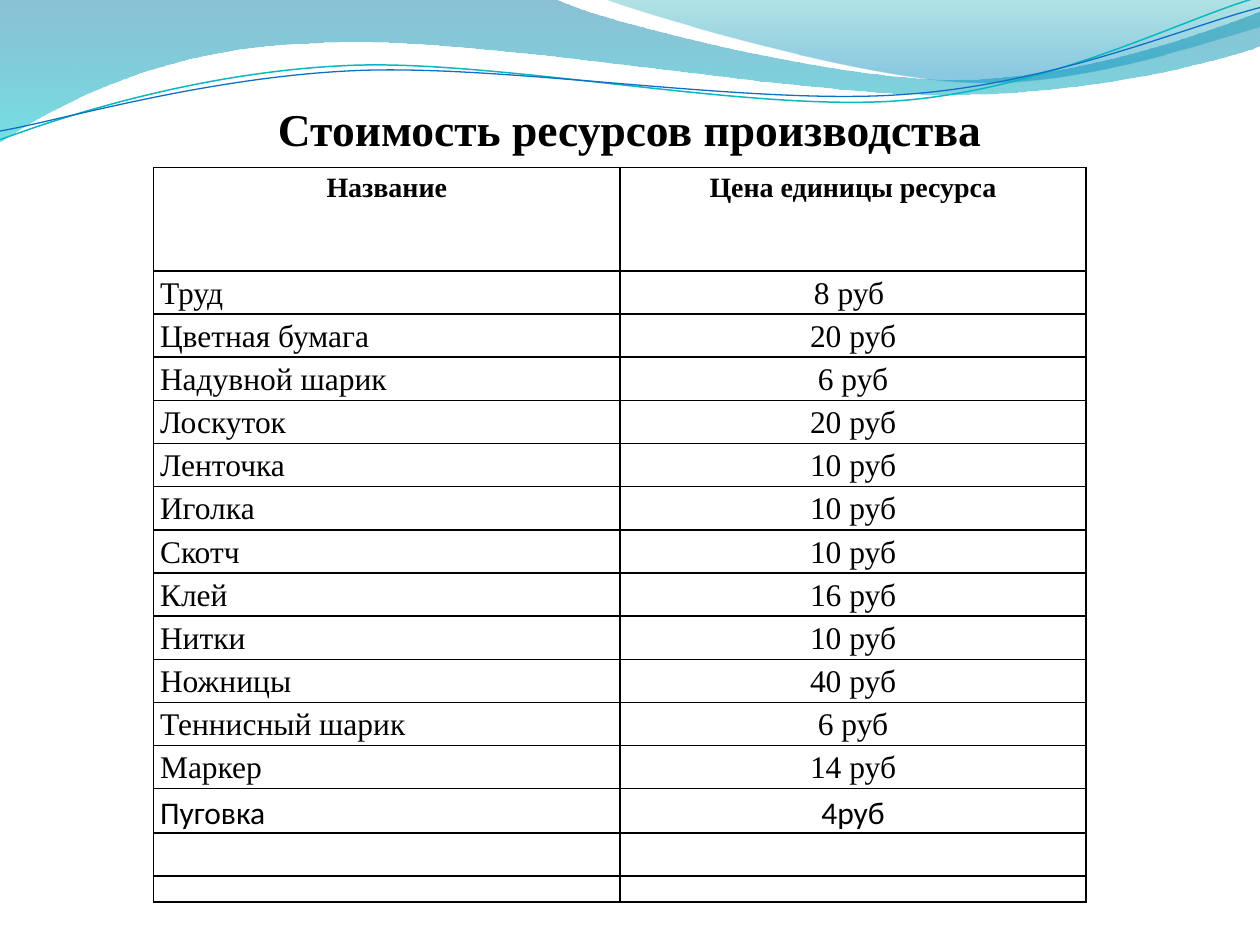
from dataclasses import dataclass
from math import cos, radians, sin

from lxml.etree import SubElement
from pptx import Presentation
from pptx.dml.color import RGBColor
from pptx.enum.text import MSO_ANCHOR as Anchor, PP_ALIGN as Align
from pptx.oxml.ns import qn
from pptx.util import Inches, Pt

COLORS = {
    "text": "000000",
    "border": "000000",
    "deep blue": "0074A1",
    "aqua": "00C6CF",
    "teal": "00A1A9",
    "sky": "008BBF",
    "teal line": "0AB8BF",
    "blue line": "0F6FC6",
}
SERIF = "Times New Roman"


@dataclass
class Stop:
    position: float
    color: str
    opacity: int


@dataclass
class Wave:
    bounds: tuple
    start: tuple
    segments: list
    stops: tuple = ()
    line: str = ""
    width: float = 0
    rotation: float = 0


@dataclass
class Resource:
    name: str
    price: str
    font: str = SERIF


WAVES = [
    Wave(
        (-0.01, -0.01, 10.02, 1.14), (0, 0),
        [(4.4, -0.01), (4.76, 0.17, 6.64, 0.63, 7.58, 0.63),
         (8.53, 0.63, 9.58, 0.26, 10, 0.09), (10.01, 0.36),
         (9.83, 0.44, 8.7, 0.76, 7.46, 0.75), (6.22, 0.75, 3.82, 0.28, 2.57, 0.34),
         (1.29, 0.36, 0.46, 0.83, -0.01, 1.13), (0, 0)],
        stops=(Stop(0, "deep blue", 45), Stop(1, "aqua", 55)),
    ),
    Wave(
        (4.79, -0.01, 5.21, 0.7), (4.79, -0.01),
        [(5.09, 0.11, 6.82, 0.62, 7.69, 0.65), (8.56, 0.69, 9.61, 0.32, 10, 0.21),
         (10, 0), (4.79, -0.01)],
        stops=(Stop(0, "teal", 30), Stop(0.8, "sky", 45)),
    ),
    Wave(
        (-0.02, 0.22, 10.02, 0.71), (0, 1.11),
        [(0.48, 0.93, 1.58, 0.57, 2.77, 0.52), (3.95, 0.47, 5.93, 0.89, 7.13, 0.8),
         (8.33, 0.71, 9.38, 0.15, 9.98, -0.02)],
        line="teal line", width=0.85, rotation=357.3,
    ),
    Wave(
        (-0.02, 0.3, 10.03, 0.58), (0, 1.04),
        [(0.47, 0.96, 1.64, 0.61, 2.83, 0.56), (4.03, 0.51, 5.97, 0.84, 7.17, 0.75),
         (8.36, 0.67, 9.41, 0.21, 10, 0.06)],
        line="blue line", width=0.75, rotation=357.3,
    ),
]

RESOURCES = [
    Resource("Труд", "8 руб "),
    Resource("Цветная бумага", "20 руб"),
    Resource("Надувной шарик", "6 руб"),
    Resource("Лоскуток", "20 руб"),
    Resource("Ленточка", "10 руб"),
    Resource("Иголка", "10 руб"),
    Resource("Скотч", "10 руб"),
    Resource("Клей", "16 руб"),
    Resource("Нитки", "10 руб"),
    Resource("Ножницы", "40 руб"),
    Resource("Теннисный шарик", "6 руб"),
    Resource("Маркер", "14 руб"),
    Resource("Пуговка", "4руб", "Calibri"),
    Resource("", ""),
    Resource("", ""),
]


def rgb(name: str) -> RGBColor:
    return RGBColor.from_string(COLORS[name])


def add_outline(page, wave: Wave):
    left, top, width, height = wave.bounds
    middle_x, middle_y = left + width / 2, top + height / 2
    angle = radians(-wave.rotation)
    builder = page.shapes.build_freeform(Inches(left), Inches(top))
    builder.add_line_segments([(Inches(left + width), Inches(top + height))], close=False)
    shape = builder.convert_to_shape()
    shape.rotation = wave.rotation
    outline = next(shape._element.iter(qn("a:path")))
    for step in list(outline):
        outline.remove(step)

    def add_step(tag: str, numbers: tuple) -> None:
        step = SubElement(outline, qn(f"a:{tag}"))
        for x, y in zip(numbers[::2], numbers[1::2]):
            dx, dy = x - middle_x, y - middle_y
            local_x = width / 2 + dx * cos(angle) - dy * sin(angle)
            local_y = height / 2 + dx * sin(angle) + dy * cos(angle)
            SubElement(step, qn("a:pt"), x=str(Inches(local_x)), y=str(Inches(local_y)))

    add_step("moveTo", wave.start)
    for segment in wave.segments:
        add_step("lnTo" if len(segment) == 2 else "cubicBezTo", segment)
    if wave.stops:
        SubElement(outline, qn("a:close"))
    return shape


def draw_wave(page, wave: Wave) -> None:
    shape = add_outline(page, wave)
    shape.shadow.inherit = False
    if wave.stops:
        shape.line.fill.background()
        shape.fill.gradient()
        shape.fill.gradient_angle = 270
        for target, stop in zip(shape.fill.gradient_stops, wave.stops):
            target.position = stop.position
            target.color.rgb = rgb(stop.color)
            color = target._gs.find(qn("a:srgbClr"))
            SubElement(color, qn("a:alpha"), val=str(stop.opacity * 1000))
    else:
        shape.fill.background()
        shape.line.color.rgb = rgb(wave.line)
        shape.line.width = Pt(wave.width)


def write(frame, text: str, *, size: float, font: str = SERIF, bold: bool = False,
          align=Align.LEFT, spacing: float = 1.0) -> None:
    para = frame.paragraphs[0]
    para.alignment = align
    para.line_spacing = spacing
    if not text:
        SubElement(para._p, qn("a:endParaRPr"), sz=str(int(size * 100)))
        return
    span = para.add_run()
    span.text = text
    span.font.size = Pt(size)
    span.font.name = font
    span.font.bold = bold
    span.font.color.rgb = rgb("text")


def format_cell(cell) -> None:
    cell.margin_left = cell.margin_right = Inches(0.05)
    cell.margin_top = cell.margin_bottom = 0
    properties = cell._tc.get_or_add_tcPr()
    for side in ("lnL", "lnR", "lnT", "lnB"):
        border = SubElement(properties, qn(f"a:{side}"), w=str(Pt(1)))
        fill = SubElement(border, qn("a:solidFill"))
        SubElement(fill, qn("a:srgbClr"), val=COLORS["border"])
    cell.fill.background()


def draw_table(page) -> None:
    regular = len(RESOURCES) - 1
    heights = [0.82] + [4.8 / regular] * regular + [0.2]
    table = page.shapes.add_table(len(heights), 2, Inches(1.22), Inches(1.33),
                                  Inches(7.4), Inches(sum(heights))).table
    table.first_row = table.horz_banding = False
    for row, height in zip(table.rows, heights):
        row.height = Inches(height)
    for cell in table.iter_cells():
        format_cell(cell)
    for column, heading in enumerate(("Название", "Цена единицы ресурса")):
        write(table.cell(0, column).text_frame, heading, size=16, bold=True,
              align=Align.CENTER, spacing=1.15)
    for row, resource in enumerate(RESOURCES, 1):
        size = 18 if resource.name else 12
        for column, text, align in ((0, resource.name, Align.LEFT),
                                    (1, resource.price, Align.CENTER)):
            write(table.cell(row, column).text_frame, text, size=size, font=resource.font,
                  align=align, spacing=1.15 if text else 1.0)


def draw_title(page) -> None:
    box = page.shapes.add_textbox(Inches(1.02), Inches(0.74), Inches(7.96), Inches(0.84))
    frame = box.text_frame
    frame.word_wrap = False
    frame.vertical_anchor = Anchor.TOP
    frame.margin_top = Inches(0.06)
    write(frame, "Стоимость ресурсов производства", size=26, bold=True, align=Align.CENTER)


def main() -> None:
    deck = Presentation()
    deck.slide_width, deck.slide_height = Inches(10), Inches(7.5)
    page = deck.slides.add_slide(deck.slide_layouts[6])
    for wave in WAVES:
        draw_wave(page, wave)
    draw_table(page)
    draw_title(page)
    deck.save("out.pptx")


if __name__ == "__main__":
    main()
